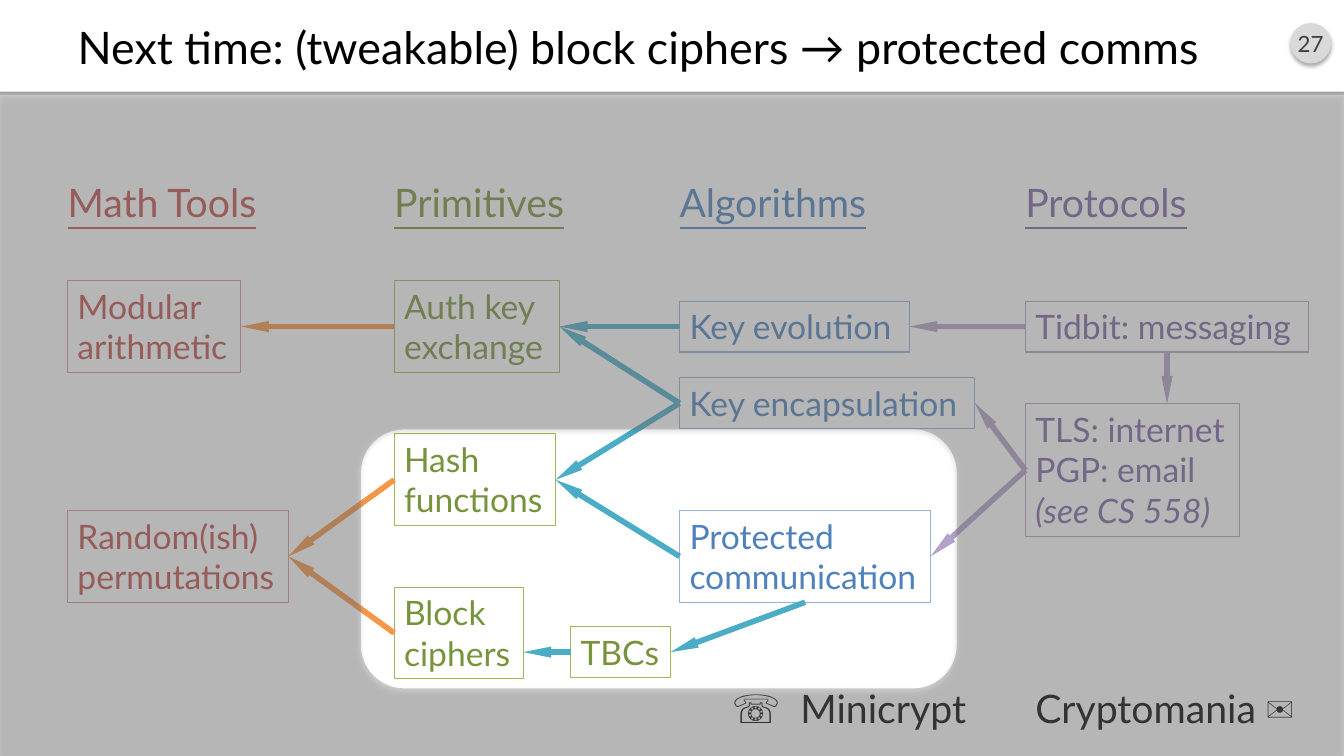
import math
from lxml import etree
from pptx import Presentation
from pptx.dml.color import RGBColor
from pptx.enum.shapes import MSO_CONNECTOR, MSO_SHAPE
from pptx.enum.text import MSO_ANCHOR, MSO_AUTO_SIZE, PP_ALIGN
from pptx.oxml.ns import qn
from pptx.util import Inches, Pt

RECT, OVAL = MSO_SHAPE.RECTANGLE, MSO_SHAPE.OVAL
STRAIGHT = MSO_CONNECTOR.STRAIGHT
MIDDLE, TOP = MSO_ANCHOR.MIDDLE, MSO_ANCHOR.TOP
LEFT, CENTER, RIGHT = PP_ALIGN.LEFT, PP_ALIGN.CENTER, PP_ALIGN.RIGHT
FIT, NO_FIT = MSO_AUTO_SIZE.SHAPE_TO_FIT_TEXT, MSO_AUTO_SIZE.NONE
LEFT_SIDE, BOTTOM_SIDE, RIGHT_SIDE = 1, 2, 3

W, H = 13.33, 7.5
FONT = "Lato"
TITLE = "Next time: (tweakable) block ciphers → protected comms"
PAGE = "27"
BAND_TOP, BAND_H = 0.91, 0.03
HEAD_TOP, FOOT_TOP, LABEL_H = 1.72, 6.74, 0.57
ROW_TOP, ROW_STEP = 3.24, 0.76
LINE_H, BOX_PAD = 0.405, 0.1
HOLE = (3.58, 4.26, 9.49, 6.83)
HOLE_R = 0.43

COLUMNS = [
    ("Math Tools", 0.67, 2.12, "C0504D", "D99694"),
    ("Primitives", 3.91, 1.9, "77933C", "9BBB59"),
    ("Algorithms", 6.74, 2.06, "4F81BD", "95B3D7"),
    ("Protocols", 10.17, 1.8, "8064A2", "B3A2C7"),
]
FOOTERS = [("☏  Minicrypt", 7.07, 2.61, RIGHT), ("Cryptomania ✉", 10.17, 2.98, LEFT)]

# name: column, indent, row, width, paragraphs
BOXES = {
    "modular": (0, 0, 0, 1.72, ["Modular\narithmetic"]),
    "random": (0, 0, 3, 2.19, ["Random(ish)\npermutations"]),
    "exchange": (1, 0, 0, 1.64, ["Auth key\nexchange"]),
    "hash": (1, 0, 2, 1.6, ["Hash\nfunctions"]),
    "block": (1, 0, 4, 1.28, ["Block\nciphers"]),
    "tbc": (1, 1.75, 4.25, 0.99, ["TBCs"]),
    "evolution": (2, 0, 0, 2.28, ["Key evolution"]),
    "encapsulation": (2, 0, 1, 2.93, ["Key encapsulation"]),
    "protected": (2, 0, 3, 2.49, ["Protected\ncommunication"]),
    "messaging": (3, 0, 0, 2.81, ["Tidbit: messaging"]),
    "tls": (3, 0, 1.875, 2.12, ["TLS: internet\nPGP: email", "(see CS 558)"]),
}
ORANGE, TEAL, LILAC = "F79646", "4BACC6", "B3A2C7"
SIDEWAYS = [
    (ORANGE, "modular", "exchange"),
    (ORANGE, "random", "hash"),
    (ORANGE, "random", "block"),
    (TEAL, "exchange", "evolution"),
    (TEAL, "exchange", "encapsulation"),
    (TEAL, "hash", "encapsulation"),
    (TEAL, "hash", "protected"),
    (LILAC, "evolution", "messaging"),
    (LILAC, "encapsulation", "tls"),
    (LILAC, "protected", "tls"),
]


def rgb(color):
    return RGBColor.from_string(color)


def write(shape, paragraphs, size, color, align=LEFT, anchor=TOP, fit=FIT, wrap=False,
          margins=(0.1, 0.05, 0.1, 0.05), underline=None):
    tf = shape.text_frame
    left, top, right, bottom = map(Inches, margins)
    for name, value in dict(word_wrap=wrap, auto_size=fit, vertical_anchor=anchor,
                            margin_left=left, margin_top=top,
                            margin_right=right, margin_bottom=bottom).items():
        setattr(tf, name, value)
    for i, text in enumerate(paragraphs):
        p = tf.add_paragraph() if i else tf.paragraphs[0]
        p.text = text
        p.alignment = align
        for r in p.runs:
            for name, value in dict(name=FONT, size=Pt(size), underline=underline,
                                    italic=text.startswith("(") or None).items():
                setattr(r.font, name, value)
            r.font.color.rgb = rgb(color)


def paint(shape, fill=None, line=None):
    shape.shadow.inherit = False
    if fill:
        shape.fill.solid()
        shape.fill.fore_color.rgb = rgb(fill)
    else:
        shape.fill.background()
    if line:
        shape.line.color.rgb = rgb(line)
        shape.line.width = Pt(0.75)
    else:
        shape.line.fill.background()


def drop_shadow(shape):
    effects = shape._element.spPr.find(qn("a:effectLst"))
    outer = etree.SubElement(effects, qn("a:outerShdw"), blurRad=str(Pt(3.1)),
                             dist=str(Pt(1.8)), dir="5400000", rotWithShape="0")
    color = etree.SubElement(outer, qn("a:srgbClr"), val="000000")
    etree.SubElement(color, qn("a:alpha"), val="35000")


def add_box(s, kind, box, fill=None, line=None):
    shape = s.shapes.add_shape(kind, *map(Inches, box))
    paint(shape, fill, line)
    return shape


def add_label(s, box, text, color, **kwargs):
    write(s.shapes.add_textbox(*map(Inches, box)), [text], 28, color, **kwargs)


def add_arrow(s, color, end, begin=None, point=(0, 0)):
    line = s.shapes.add_connector(STRAIGHT, *point, *point)
    if begin:
        line.begin_connect(*begin)
    line.end_connect(*end)
    line.line.color.rgb = rgb(color)
    line.line.width = Pt(4)
    spPr = line._element.spPr
    etree.SubElement(spPr.find(qn("a:ln")), qn("a:headEnd"),
                     type="triangle", w="sm", len="lg")
    etree.SubElement(spPr, qn("a:effectLst"))


def points(pairs):
    return [(Inches(x), Inches(y)) for x, y in pairs]


def add_veil(s):
    x0, y0, x1, y1 = HOLE
    corners = [(x1, y1, -1, -1), (x0, y1, 1, -1), (x0, y0, 1, 1), (x1, y0, -1, 1)]
    hole = []
    for quarter, (x, y, dx, dy) in enumerate(corners):
        for step in range(13):
            angle = math.radians(90 * quarter + 7.5 * step)
            hole.append((x + HOLE_R * (dx + math.cos(angle)),
                         y + HOLE_R * (dy + math.sin(angle))))
    top = BAND_TOP + BAND_H
    outer = points([(0, top), (0, H), (W, H), (W, top)])
    inner = points(hole)
    builder = s.shapes.build_freeform(*outer[0])
    builder.add_line_segments(outer[1:], close=True)
    builder.move_to(*inner[0])
    builder.add_line_segments(inner[1:], close=True)
    veil = builder.convert_to_shape()
    paint(veil, "808080")
    color = veil._element.spPr.find(qn("a:solidFill"))[0]
    etree.SubElement(color, qn("a:alpha"), val="40000")
    drop_shadow(veil)


def main():
    prs = Presentation()
    prs.slide_width, prs.slide_height = Inches(W), Inches(H)
    s = prs.slides.add_slide(prs.slide_layouts[5])
    title = s.shapes.title
    title.left, title.top, title.width, title.height = map(Inches, (0.67, 0.16, 12, 0.6))
    write(title, [TITLE], 32, "000000", anchor=MIDDLE, fit=NO_FIT, wrap=True)
    badge = add_box(s, OVAL, (12.8, 0.23, 0.4, 0.4), "D9D9D9")
    drop_shadow(badge)
    write(badge, [PAGE], 16, "404040", CENTER, MIDDLE, NO_FIT, True, (0, 0.05, 0, 0.05))
    add_box(s, RECT, (0, BAND_TOP, W, BAND_H), "A6A6A6")

    for text, x, width, color, _ in COLUMNS:
        add_label(s, (x, HEAD_TOP, width, LABEL_H), text, color,
                  margins=(0, 0.05, 0.1, 0.05), underline=True)
    for text, x, width, align in FOOTERS:
        add_label(s, (x, FOOT_TOP, width, LABEL_H), text, "000000", align=align)

    boxes = {}
    for name, (col, indent, row, width, paragraphs) in BOXES.items():
        _, x, _, color, border = COLUMNS[col]
        lines = sum(text.count("\n") + 1 for text in paragraphs)
        height = BOX_PAD + LINE_H * lines
        y = ROW_TOP + ROW_STEP * row - height / 2
        boxes[name] = add_box(s, RECT, (x + indent, y, width, height), line=border)
        write(boxes[name], paragraphs, 24, color)

    for color, target, user in SIDEWAYS:
        add_arrow(s, color, (boxes[user], LEFT_SIDE), (boxes[target], RIGHT_SIDE))
    tbc, block, chat, tls = (boxes[n] for n in ("tbc", "block", "messaging", "tls"))
    add_arrow(s, TEAL, (boxes["protected"], BOTTOM_SIDE), (tbc, RIGHT_SIDE))
    add_arrow(s, TEAL, (tbc, LEFT_SIDE),
              point=(block.left + block.width, tbc.top + tbc.height // 2))
    add_arrow(s, LILAC, (chat, BOTTOM_SIDE), point=(chat.left + chat.width // 2, tls.top))
    add_veil(s)
    prs.save("out.pptx")


if __name__ == "__main__":
    main()
